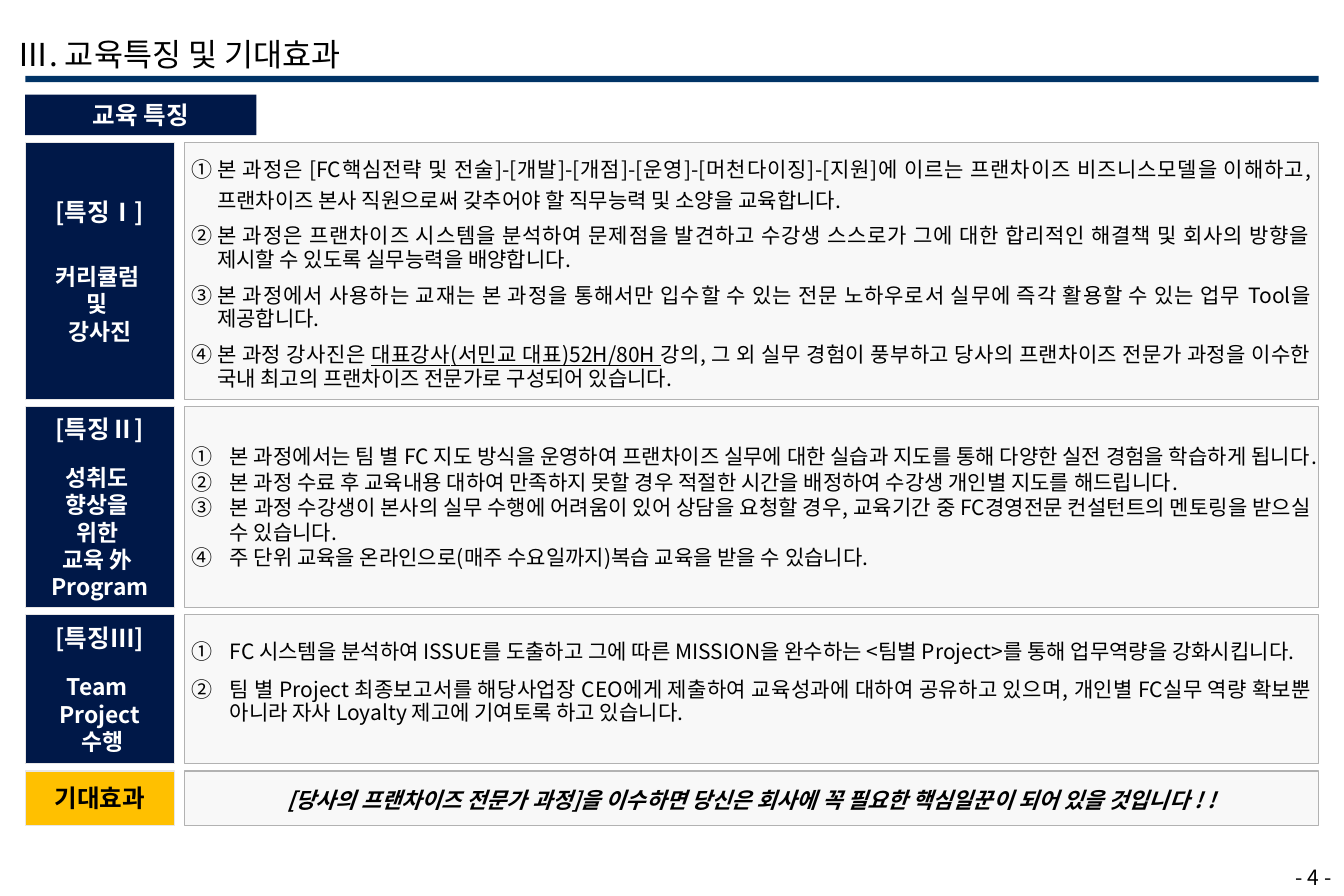
from dataclasses import dataclass
from typing import Optional, Union

from lxml.etree import SubElement
from pptx import Presentation
from pptx.dml.color import RGBColor
from pptx.enum.shapes import MSO_SHAPE
from pptx.enum.text import MSO_ANCHOR, PP_ALIGN
from pptx.oxml.ns import qn
from pptx.util import Emu, Inches, Length, Pt


@dataclass(frozen=True)
class Theme:
    font: str = "Noto Sans CJK KR"
    rule: str = "003366"
    navy: str = "001848"
    gold: str = "FFC000"
    panel: str = "F8F8F8"
    panel_line: str = "B2B2B2"
    label_line: str = "E7E6E6"
    black: str = "000000"
    white: str = "FFFFFF"
    title: float = 18
    heading: float = 14
    topic: float = 13
    slogan: float = 12.5
    body: float = 12


@dataclass(frozen=True)
class Span:
    text: str
    underline: Optional[bool] = None


@dataclass(frozen=True)
class Para:
    spans: tuple[Span, ...]
    size: float
    color: str = "000000"
    bold: bool = False
    italic: bool = False
    align: PP_ALIGN = PP_ALIGN.CENTER
    line: Union[float, Length, None] = None
    before: float = 0
    hang: float = 0  # numbered, with this hanging indent in % of the width


@dataclass(frozen=True)
class Box:
    """Place in % of the slide's width and height."""
    left: float
    top: float
    width: float
    height: float


@dataclass(frozen=True)
class Band:
    height: float
    label: list[Para]
    body: list[Para]
    fill: str
    bottom_inset: float = 0.71


T = Theme()
WIDTH, HEIGHT = Inches(10.64), Inches(7.09)
LEFT, LABEL_W, BODY_LEFT, RIGHT = 1.88, 11.09, 13.72, 98.12
BANDS_TOP, BAND_GAP = 15.94, 0.8
TIGHT = Pt(13.5)


def across(share: float) -> Emu:
    return Emu(round(WIDTH * share / 100))


def down(share: float) -> Emu:
    return Emu(round(HEIGHT * share / 100))


def place(box: Box) -> tuple[Emu, Emu, Emu, Emu]:
    return across(box.left), down(box.top), across(box.width), down(box.height)


def plain(text: str, size: float, **formats) -> Para:
    return Para((Span(text),), size, **formats)


def label(heading: str, topics: list[str], gap: float) -> list[Para]:
    """White heading, then topic lines that start `gap` points below it."""
    topic_paras = [plain(t, T.topic, color=T.white, bold=True, before=0 if i else gap)
                   for i, t in enumerate(topics)]
    return [plain(heading, T.heading, color=T.white, bold=True), *topic_paras]


def numbered(items: list[Union[str, tuple[Span, ...]]], hang: float, gap: float = 0,
             line: Optional[Length] = None, first_line: Union[float, Length, None] = None) -> list[Para]:
    return [Para((Span(item),) if isinstance(item, str) else item, T.body,
                 align=PP_ALIGN.JUSTIFY, hang=hang, before=gap if i else 0,
                 line=line if i else first_line)
            for i, item in enumerate(items)]


def write(tf, paras: list[Para]) -> None:
    for i, para in enumerate(paras):
        p = tf.add_paragraph() if i else tf.paragraphs[0]
        formats = {"alignment": para.align, "line_spacing": para.line,
                   "space_before": Pt(para.before) if para.before else None}
        for name, value in formats.items():
            setattr(p, name, value)
        if para.hang:
            pPr = p._p.get_or_add_pPr()
            pPr.set("marL", str(across(para.hang)))
            pPr.set("indent", str(-across(para.hang)))
            SubElement(pPr, qn("a:buFont"), typeface=T.font)
            SubElement(pPr, qn("a:buAutoNum"), type="circleNumDbPlain")
        for span in para.spans:
            r = p.add_run()
            r.text = span.text
            fonts = {"size": Pt(para.size), "bold": para.bold, "italic": para.italic,
                     "underline": span.underline, "name": T.font}
            for name, value in fonts.items():
                setattr(r.font, name, value)
            r.font.color.rgb = RGBColor.from_string(para.color)
            SubElement(r._r.get_or_add_rPr(), qn("a:ea"), typeface=T.font)


def add_panel(s, box: Box, fill: str, line: Optional[str] = None,
              paras: Optional[list[Para]] = None, **frame):
    sp = s.shapes.add_shape(MSO_SHAPE.RECTANGLE, *place(box))
    sp.shadow.inherit = False
    sp.fill.solid()
    sp.fill.fore_color.rgb = RGBColor.from_string(fill)
    if line:
        sp.line.color.rgb = RGBColor.from_string(line)
        sp.line.width = Pt(0.75)
    else:
        sp.line.fill.background()
    set_frame(sp.text_frame, paras or [], **frame)


def add_text(s, box: Box, para: Para, **frame) -> None:
    set_frame(s.shapes.add_textbox(*place(box)).text_frame, [para], **frame)


def set_frame(tf, paras: list[Para], **frame) -> None:
    for name, value in ({"vertical_anchor": MSO_ANCHOR.MIDDLE, "word_wrap": True} | frame).items():
        setattr(tf, name, value)
    write(tf, paras)


BANDS = [
    Band(28.63, label("[특징Ⅰ]", ["커리큘럼 ", "및 ", "강사진"], 20.3), numbered([
        "본 과정은 [FC핵심전략 및 전술]-[개발]-[개점]-[운영]-[머천다이징]-[지원]에 이르는 프랜차이즈 비즈니스모델을 "
        "이해하고,프랜차이즈 본사 직원으로써 갖추어야 할 직무능력 및 소양을 교육합니다.",
        "본 과정은 프랜차이즈 시스템을 분석하여 문제점을 발견하고 수강생 스스로가 그에 대한 합리적인 해결책 및 "
        "회사의 방향을 제시할 수 있도록 실무능력을 배양합니다.",
        "본 과정에서 사용하는 교재는 본 과정을 통해서만 입수할 수 있는 전문 노하우로서 실무에 즉각 활용할 수 있는 "
        "업무 Tool을 제공합니다.",
        (Span("본 과정 강사진은 "), Span("대표강사(서민교 대표)52H/80H ", True),
         Span("강의, 그 외 실무 경험이 풍부하고 당사의 프랜차이즈 전문가 과정을 이수한 국내 최고의 "
              "프랜차이즈 전문가로 구성되어 있습니다.")),
    ], hang=1.88, gap=6.8, line=TIGHT, first_line=1.2), T.navy),
    Band(22.43, label("[특징Ⅱ]", ["성취도 ", "향상을 ", "위한 ", "교육 外 ", "Program"], 11.6), numbered([
        "본 과정에서는 팀 별 FC 지도 방식을 운영하여 프랜차이즈 실무에 대한 실습과 지도를 통해 다양한 실전 경험을 "
        "학습하게 됩니다.",
        "본 과정 수료 후 교육내용 대하여 만족하지 못할 경우 적절한 시간을 배정하여 수강생 개인별 지도를 해드립니다.",
        "본 과정 수강생이 본사의 실무 수행에 어려움이 있어 상담을 요청할 경우, 교육기간 중 FC경영전문 컨설턴트의 "
        "멘토링을 받으실 수 있습니다.",
        "주 단위 교육을 온라인으로(매주 수요일까지)복습 교육을 받을 수 있습니다.",
    ], hang=2.82), T.navy),
    Band(16.64, label("[특징Ⅲ]", ["Team ", "Project", " 수행"], 11.6), numbered([
        "FC 시스템을 분석하여 ISSUE를 도출하고 그에 따른 MISSION을 완수하는 <팀별 Project>를 통해 업무역량을 "
        "강화시킵니다.",
        "팀 별 Project 최종보고서를 해당사업장 CEO에게 제출하여 교육성과에 대하여 공유하고 있으며, 개인별 FC실무 "
        "역량 확보뿐 아니라 자사 Loyalty 제고에 기여토록 하고 있습니다.",
    ], hang=2.82, gap=7.8, line=TIGHT, first_line=TIGHT), T.navy, bottom_inset=2.16),
    Band(6.06, [plain("기대효과", T.heading, bold=True)], [
        plain("[당사의 프랜차이즈 전문가 과정]을 이수하면 당신은 회사에 꼭 필요한 핵심일꾼이 되어 있을 것입니다 ! !",
              T.slogan, bold=True, italic=True, line=1.1)], T.gold),
]


def main() -> None:
    prs = Presentation()
    prs.slide_width, prs.slide_height = WIDTH, HEIGHT
    s = prs.slides.add_slide(prs.slide_layouts[6])

    add_text(s, Box(0.38, 3.24, 28.48, 5.64),
             plain("Ⅲ. 교육특징 및 기대효과", T.title, align=PP_ALIGN.LEFT),
             word_wrap=False, vertical_anchor=MSO_ANCHOR.TOP)
    add_panel(s, Box(LEFT, 8.46, RIGHT - LEFT, 0.71), T.rule)
    add_panel(s, Box(LEFT, 10.58, 17.2, 4.51), T.navy,
              paras=[plain("교육 특징", T.heading, color=T.white, bold=True)], word_wrap=False)

    top = BANDS_TOP
    for band in BANDS:
        add_panel(s, Box(LEFT, top, LABEL_W, band.height), band.fill, T.label_line, band.label)
        add_panel(s, Box(BODY_LEFT, top, RIGHT - BODY_LEFT, band.height), T.panel, T.panel_line,
                  band.body, margin_left=across(0.56), margin_right=across(0.56),
                  margin_bottom=down(band.bottom_inset))
        top += band.height + BAND_GAP

    add_text(s, Box(90.51, 96.05, 9.49, 3.67), plain("- 4 -", T.body, align=PP_ALIGN.RIGHT))
    prs.save("out.pptx")


if __name__ == "__main__":
    main()
